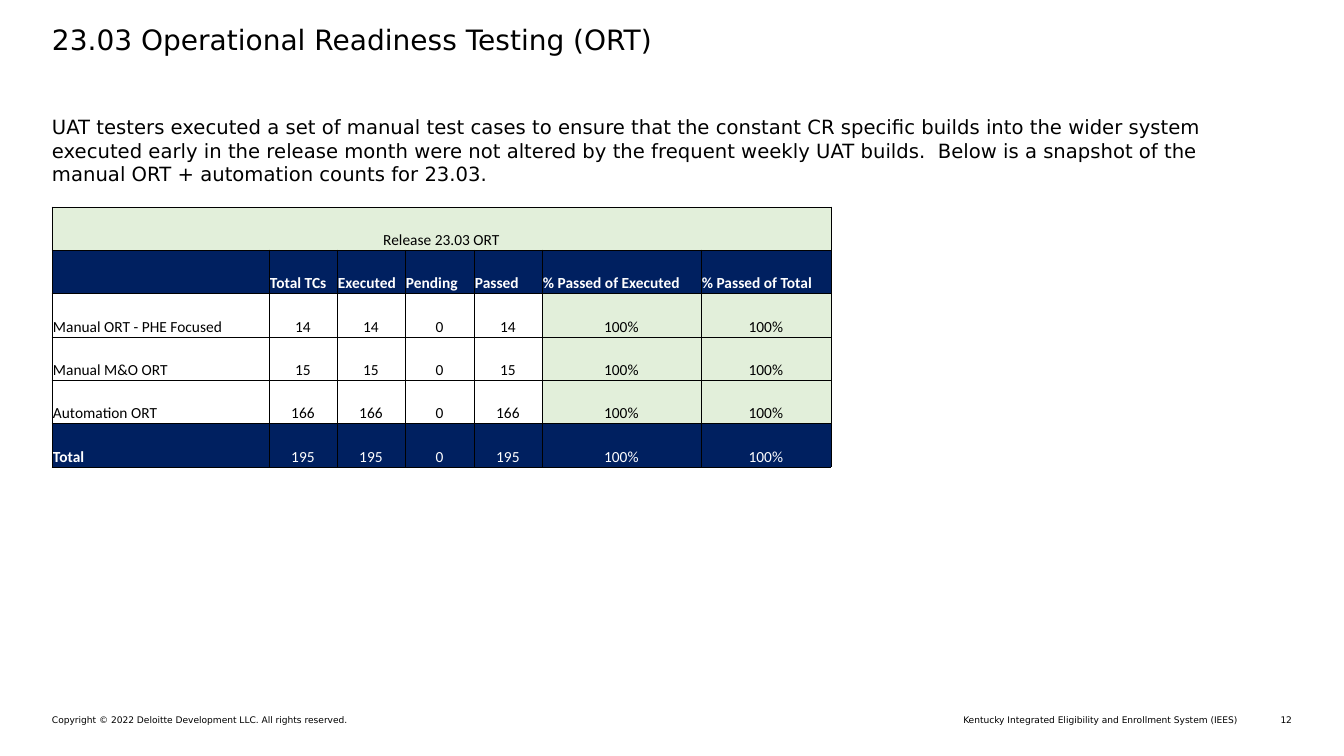
from dataclasses import dataclass

from lxml.etree import SubElement
from pptx import Presentation
from pptx.dml.color import RGBColor
from pptx.enum.text import MSO_ANCHOR, PP_ALIGN
from pptx.oxml.ns import qn
from pptx.slide import Slide
from pptx.table import _Cell
from pptx.text.text import _Paragraph
from pptx.util import Emu, Pt

PX_PER_INCH = 100.8
COLORS = {"black": "000000", "white": "FFFFFF", "navy": "002060", "green": "E2EFDA"}
BODY_FONT = "DejaVu Sans"
TABLE_FONT = "Calibri"

TABLE_LEFT, TABLE_TOP, TABLE_HEIGHT = 52, 207, 260
COLUMN_WIDTHS = [217, 68, 68, 69, 68, 159, 130]
TABLE_TITLE = "Release 23.03 ORT"
HEADERS = ["", "Total TCs", "Executed", "Pending", "Passed",
           "% Passed of Executed", "% Passed of Total"]


@dataclass(frozen=True)
class TextBlock:
    text: str
    left: int
    top: int
    width: int
    height: int
    size: float
    align: PP_ALIGN = PP_ALIGN.LEFT


@dataclass(frozen=True)
class TestResult:
    label: str
    total: int
    executed: int
    pending: int
    passed: int

    def texts(self) -> list[str]:
        counts = [self.total, self.executed, self.pending, self.passed]
        shares = [self.passed / self.executed, self.passed / self.total]
        return [self.label, *map(str, counts), *(f"{share:.0%}" for share in shares)]


TEXT_BLOCKS = [
    TextBlock("Kentucky Integrated Eligibility and Enrollment System (IEES)",
              699, 714, 539, 11, 6.5, PP_ALIGN.RIGHT),
    TextBlock("Copyright © 2022 Deloitte Development LLC. All rights reserved.",
              52, 714, 590, 11, 6.5),
    TextBlock("12", 1258, 714, 34, 11, 6.5, PP_ALIGN.RIGHT),
    TextBlock("23.03 Operational Readiness Testing (ORT)", 52, 23, 1240, 37, 20),
    TextBlock("UAT testers executed a set of manual test cases to ensure that the constant CR "
              "specific builds into the wider system  executed early in the release month were "
              "not altered by the frequent weekly UAT builds.  Below is a snapshot of the "
              "manual ORT + automation counts for 23.03.", 52, 115, 1210, 72, 14),
]
RESULTS = [
    TestResult("Manual ORT - PHE Focused", 14, 14, 0, 14),
    TestResult("Manual M&O ORT", 15, 15, 0, 15),
    TestResult("Automation ORT", 166, 166, 0, 166),
]
TOTAL = TestResult("Total", *(sum(getattr(result, field) for result in RESULTS)
                              for field in ("total", "executed", "pending", "passed")))


def px(length: int) -> Emu:
    return Emu(round(length * 914400 / PX_PER_INCH))


def set_font(paragraph: _Paragraph, name: str, size: float, color: str,
             bold: bool = False) -> None:
    paragraph.font.name = name
    paragraph.font.size = Pt(size)
    paragraph.font.bold = bold
    paragraph.font.color.rgb = RGBColor.from_string(COLORS[color])


def add_text(slide: Slide, block: TextBlock) -> None:
    box = slide.shapes.add_textbox(px(block.left), px(block.top),
                                   px(block.width), px(block.height))
    frame = box.text_frame
    frame.word_wrap = True
    frame.margin_left = frame.margin_right = frame.margin_top = frame.margin_bottom = 0
    paragraph = frame.paragraphs[0]
    paragraph.text = block.text
    paragraph.alignment = block.align
    set_font(paragraph, BODY_FONT, block.size, "black")


def add_borders(cell: _Cell) -> None:
    properties = cell._tc.get_or_add_tcPr()
    for side in ("a:lnL", "a:lnR", "a:lnT", "a:lnB"):
        line = SubElement(properties, qn(side), w=str(Pt(0.5)))
        fill = SubElement(line, qn("a:solidFill"))
        SubElement(fill, qn("a:srgbClr"), val=COLORS["black"])


def style_cell(cell: _Cell, text: str, fill: str | None, color: str,
               bold: bool, align: PP_ALIGN) -> None:
    add_borders(cell)
    if fill:
        cell.fill.solid()
        cell.fill.fore_color.rgb = RGBColor.from_string(COLORS[fill])
    else:
        cell.fill.background()
    cell.margin_left = cell.margin_right = cell.margin_top = px(1)
    cell.margin_bottom = 0
    cell.vertical_anchor = MSO_ANCHOR.BOTTOM
    paragraph = cell.text_frame.paragraphs[0]
    paragraph.text = text
    paragraph.alignment = align
    set_font(paragraph, TABLE_FONT, 11, color, bold)


def add_results_table(slide: Slide) -> None:
    column_count = len(COLUMN_WIDTHS)
    rows = [[TABLE_TITLE] + [""] * (column_count - 1), HEADERS,
            *(result.texts() for result in RESULTS), TOTAL.texts()]
    last = len(rows) - 1
    table = slide.shapes.add_table(len(rows), column_count, px(TABLE_LEFT), px(TABLE_TOP),
                                   px(sum(COLUMN_WIDTHS)), px(TABLE_HEIGHT)).table
    table.first_row = table.horz_banding = False
    for column, width in zip(table.columns, COLUMN_WIDTHS):
        column.width = px(width)
    for i, row in enumerate(table.rows):
        row.height = px(TABLE_HEIGHT * (i + 1) // len(rows) - TABLE_HEIGHT * i // len(rows))
    for i, texts in enumerate(rows):
        for j, text in enumerate(texts):
            dark = i in (1, last)
            percent = j >= column_count - 2
            fill = "navy" if dark else "green" if i == 0 or percent else None
            bold = i == 1 or (i == last and j == 0)
            centred = i == 0 or (i > 1 and j > 0)
            style_cell(table.cell(i, j), text, fill, "white" if dark else "black", bold,
                       PP_ALIGN.CENTER if centred else PP_ALIGN.LEFT)
    table.cell(0, 0).merge(table.cell(0, column_count - 1))


def main() -> None:
    presentation = Presentation()
    presentation.slide_width = px(1344)
    presentation.slide_height = px(756)
    slide = presentation.slides.add_slide(presentation.slide_layouts[6])
    for block in TEXT_BLOCKS:
        add_text(slide, block)
    add_results_table(slide)
    presentation.save("out.pptx")


if __name__ == "__main__":
    main()
